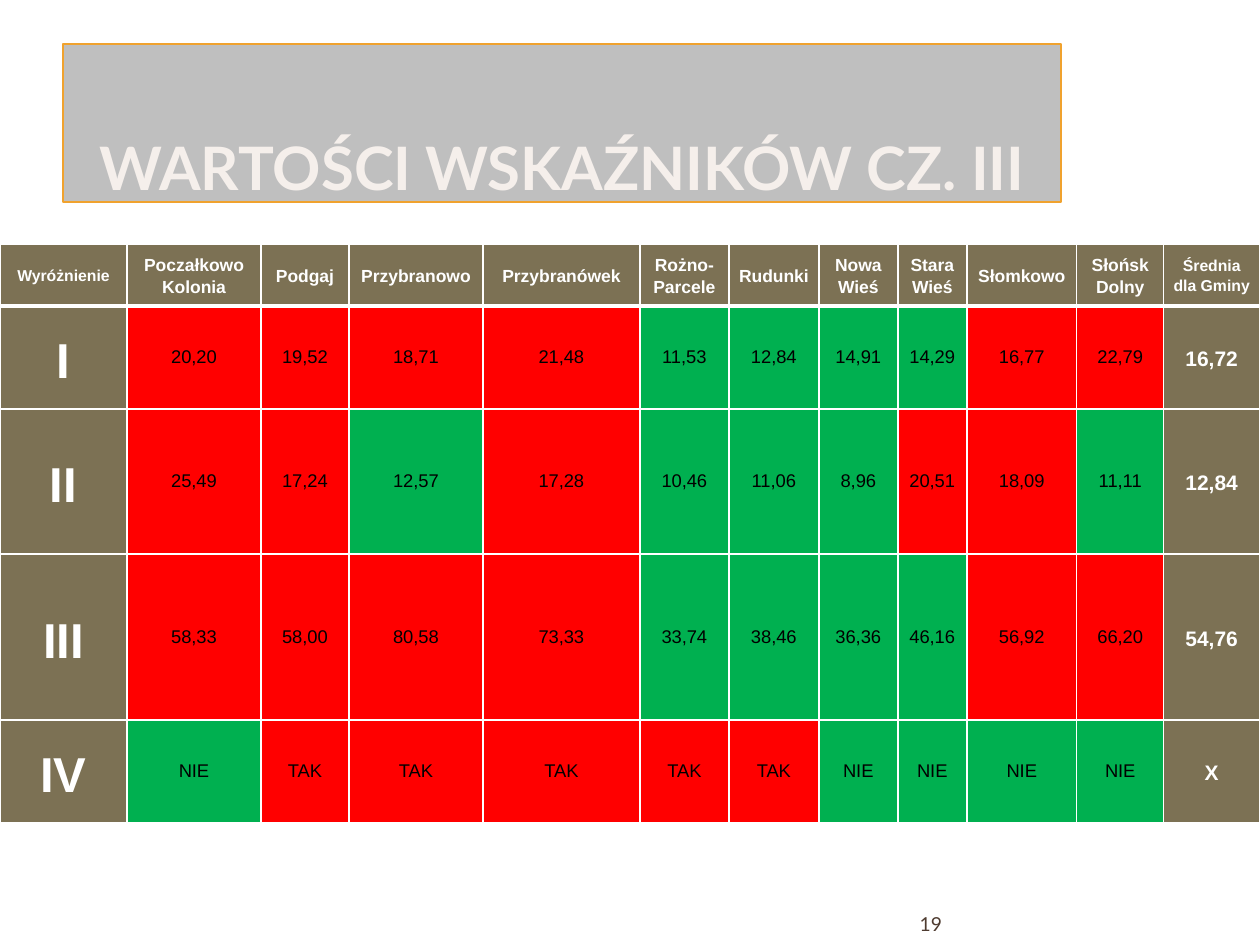
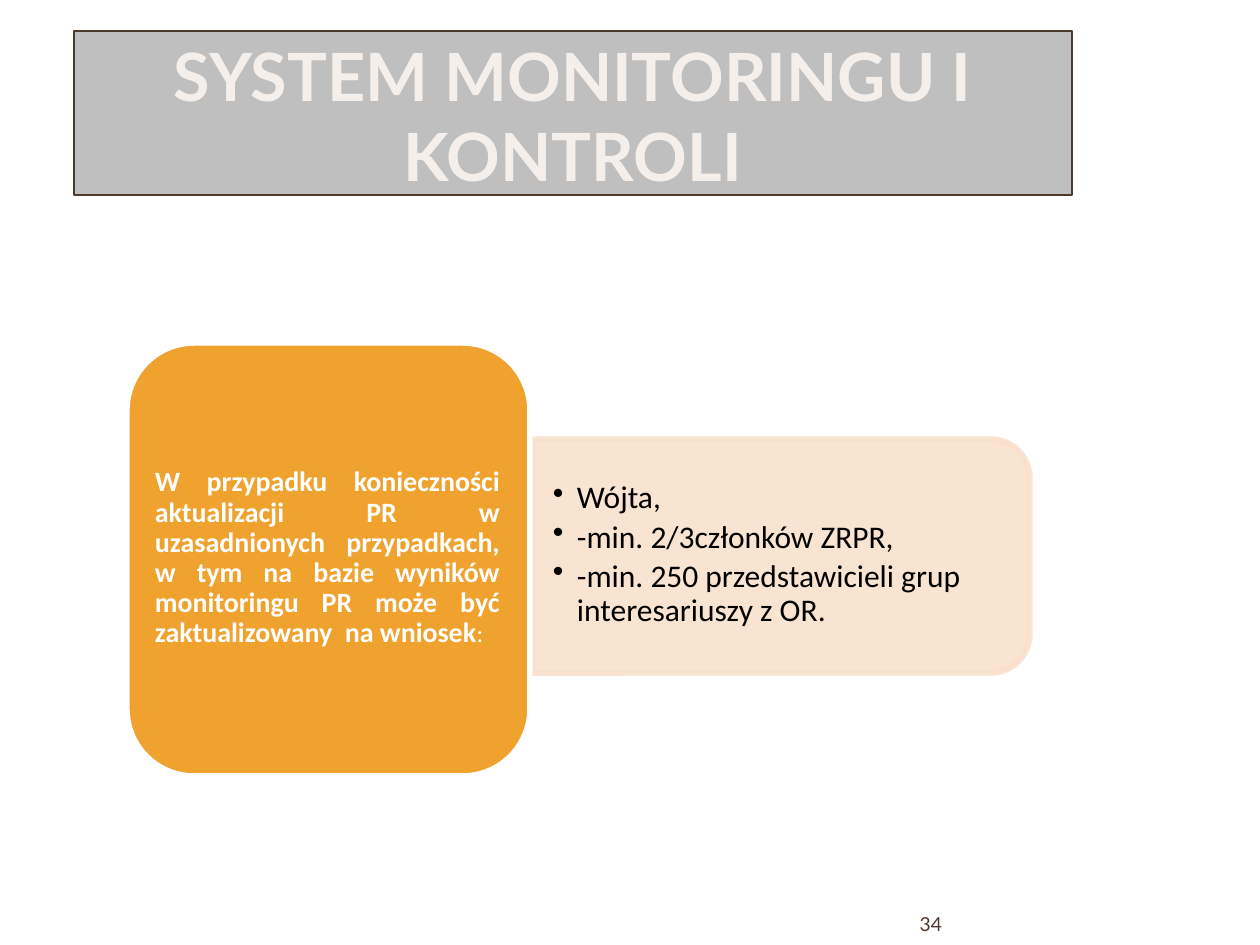
from lxml import etree
from pptx import Presentation
from pptx import util as u
from pptx.dml.color import RGBColor
from pptx.enum import shapes, text
from pptx.oxml import ns

EMU_PER_PX = 914400 / 126
BAND, TITLE_INK, ORANGE, BROWN = "BFBFBF", "F5EFEB", "F0A22E", "4E3B30"
OLIVE, RED, GREEN, PEACH = "7C7154", "FF0000", "00B050", "F9E0CD"
WHITE, BLACK = "FFFFFF", "000000"
CENTER, MIDDLE = text.PP_ALIGN.CENTER, text.MSO_ANCHOR.MIDDLE
BOTTOM = text.MSO_ANCHOR.BOTTOM

VILLAGES = ["Poczałkowo Kolonia", "Podgaj", "Przybranowo", "Przybranówek",
            "Rożno-Parcele", "Rudunki", "Nowa Wieś", "Stara Wieś",
            "Słomkowo", "Słońsk Dolny"]
INDICATORS = [
    "I 20,20 19,52 18,71 21,48 11,53 12,84 14,91 14,29 16,77 22,79 16,72",
    "II 25,49 17,24 12,57 17,28 10,46 11,06 8,96 20,51 18,09 11,11 12,84",
    "III 58,33 58,00 80,58 73,33 33,74 38,46 36,36 46,16 56,92 66,20 54,76",
    "IV NIE TAK TAK TAK TAK TAK NIE NIE NIE NIE X",
]
COL_WIDTHS = [127, 134, 88, 134, 157, 89, 90, 79, 69, 110, 87, 96]
ROW_HEIGHTS = [62, 103, 145, 166, 103]


def px(n):
    """Turn px into EMU."""
    return u.Emu(round(n * EMU_PER_PX))


def color(hex_code):
    """Turn a hex string into a colour."""
    return RGBColor.from_string(hex_code)


def child(parent, tag, **attrs):
    """Append a DrawingML element."""
    el = etree.SubElement(parent, ns.qn(tag))
    for key, value in attrs.items():
        el.set(key, str(value))
    return el


def add_run(p, words, size, font, ink, bold=False):
    """Add a formatted run to a paragraph."""
    r = p.add_run()
    r.text = words
    r.font.size, r.font.name, r.font.bold = u.Pt(size), font, bold
    r.font.color.rgb = color(ink)


def write(tf, words, align=CENTER, spacing=1.0, after=0, bullet=0, first=True, **fmt):
    """Write one paragraph, with an optional bullet indent in px."""
    p = tf.paragraphs[0] if first else tf.add_paragraph()
    p.alignment, p.line_spacing, p.space_after = align, spacing, u.Pt(after)
    if bullet:
        pPr = p._p.get_or_add_pPr()
        pPr.set("marL", str(px(bullet)))
        pPr.set("indent", str(-px(bullet)))
        child(pPr, "a:buChar", char="•")
    add_run(p, words, **fmt)
    return p


def set_frame(tf, anchor, x_inset=0, y_inset=0):
    """Set wrapping, anchor and insets of a text frame."""
    tf.word_wrap, tf.vertical_anchor = True, anchor
    tf.margin_left = tf.margin_right = px(x_inset)
    tf.margin_top = tf.margin_bottom = px(y_inset)
    return tf


def add_box(s, kind, box, fill, line, width, alpha=None):
    """Add a filled and outlined preset shape."""
    sp = s.shapes.add_shape(kind, *map(px, box))
    sp.shadow.inherit = False
    sp.fill.solid()
    sp.fill.fore_color.rgb = color(fill)
    sp.line.color.rgb = color(line)
    sp.line.width = u.Pt(width)
    if alpha:
        for clr in sp._element.spPr.iter(ns.qn("a:srgbClr")):
            child(clr, "a:alpha", val=alpha * 1000)
    return sp


def add_text(s, box, anchor, x_inset=0, y_inset=0):
    """Add a text box and return its frame."""
    return set_frame(s.shapes.add_textbox(*map(px, box)).text_frame,
                     anchor, x_inset, y_inset)


def add_slide(prs, title, box, size, line, number):
    """Add a slide with its title band and page number."""
    s = prs.slides.add_slide(prs.slide_layouts[6])
    sp = add_box(s, shapes.MSO_SHAPE.RECTANGLE, box, BAND, line, 0.75)
    write(set_frame(sp.text_frame, BOTTOM, 6), title,
          size=size, font="Lato", ink=TITLE_INK, bold=True)
    write(add_text(s, (862, 903, 80, 32), BOTTOM), number,
          align=text.PP_ALIGN.RIGHT, size=11, font="Lato", ink=BROWN)
    return s


def set_borders(cell, row):
    """Draw white cell borders, thick under the header."""
    widths = {"L": 1, "R": 1, "T": 3 if row == 1 else 1, "B": 3 if row == 0 else 1}
    tcPr = cell._tc.get_or_add_tcPr()
    for side, width in widths.items():
        ln = child(tcPr, f"a:ln{side}", w=u.Pt(width))
        child(child(ln, "a:solidFill"), "a:srgbClr", val=WHITE)


def is_problem(value, average):
    """Tell whether a village does worse than the commune."""
    if average == "X":
        return value == "TAK"
    return float(value.replace(",", ".")) > float(average.replace(",", "."))


def add_indicator_table(s):
    """Add the table of indicators, coloured against the average."""
    rows = [["Wyróżnienie", *VILLAGES, "Średnia dla Gminy"]]
    rows += [line.split() for line in INDICATORS]
    last = len(COL_WIDTHS) - 1
    table = s.shapes.add_table(len(rows), last + 1, px(0), px(244),
                               px(sum(COL_WIDTHS)), px(sum(ROW_HEIGHTS))).table
    table.horz_banding = False
    for col, width in zip(table.columns, COL_WIDTHS):
        col.width = px(width)
    for i, (values, height) in enumerate(zip(rows, ROW_HEIGHTS)):
        table.rows[i].height = px(height)
        for j, value in enumerate(values):
            edge = j in (0, last)
            label = i == 0 or edge
            if i == 0:
                size = 9 if edge else 10
            else:
                size = {0: 28, last: 12}.get(j, 10.5)
            if label:
                fill = OLIVE
            else:
                fill = RED if is_problem(value, values[last]) else GREEN
            cell = table.cell(i, j)
            cell.vertical_anchor = MIDDLE
            cell.margin_left = cell.margin_right = px(8)
            cell.margin_top = cell.margin_bottom = 0
            set_borders(cell, i)
            cell.fill.solid()
            cell.fill.fore_color.rgb = color(fill)
            write(cell.text_frame, value, spacing=1.15 if label else 1.0, size=size,
                  font="Arial", ink=WHITE if label else BLACK, bold=label)


def add_update_diagram(s):
    """Add the condition block and the list of applicants."""
    sp = add_box(s, shapes.MSO_SHAPE.ROUND_2_SAME_RECTANGLE,
                 (658, 301, 234, 510), PEACH, PEACH, 3.15, alpha=90)
    sp.rotation = 90
    tf = add_text(s, (519, 450, 499, 210), MIDDLE, 34, 18)
    applicants = ["Wójta,", "-min. 2/3członków ZRPR,",
                  "-min. 250 przedstawicieli grup interesariuszy z OR."]
    for i, applicant in enumerate(applicants):
        write(tf, applicant, align=text.PP_ALIGN.LEFT, spacing=0.9, after=3,
              bullet=24, first=i == 0, size=18, font="Calibri", ink=BLACK)

    add_box(s, shapes.MSO_SHAPE.ROUNDED_RECTANGLE, (127, 343, 403, 433),
            ORANGE, WHITE, 3.15)
    p = write(add_text(s, (146, 362, 363, 393), MIDDLE, 9, 4),
              "W przypadku konieczności aktualizacji PR w uzasadnionych przypadkach, "
              "w tym na bazie wyników monitoringu PR może być zaktualizowany  na wniosek",
              align=text.PP_ALIGN.JUSTIFY, spacing=0.9, after=6,
              size=16, font="Calibri", ink=WHITE, bold=True)
    add_run(p, ":", 14, "Calibri", WHITE)


def main():
    """Build the two slides."""
    prs = Presentation()
    prs.slide_width, prs.slide_height = px(1260), px(945)
    s = add_slide(prs, "WARTOŚCI WSKAŹNIKÓW CZ. III", (63, 44, 998, 158),
                  34.2, ORANGE, "19")
    add_indicator_table(s)
    s = add_slide(prs, "SYSTEM MONITORINGU I KONTROLI", (74, 31, 998, 164),
                  38, BROWN, "34")
    add_update_diagram(s)
    prs.save("out.pptx")


if __name__ == "__main__":
    main()
